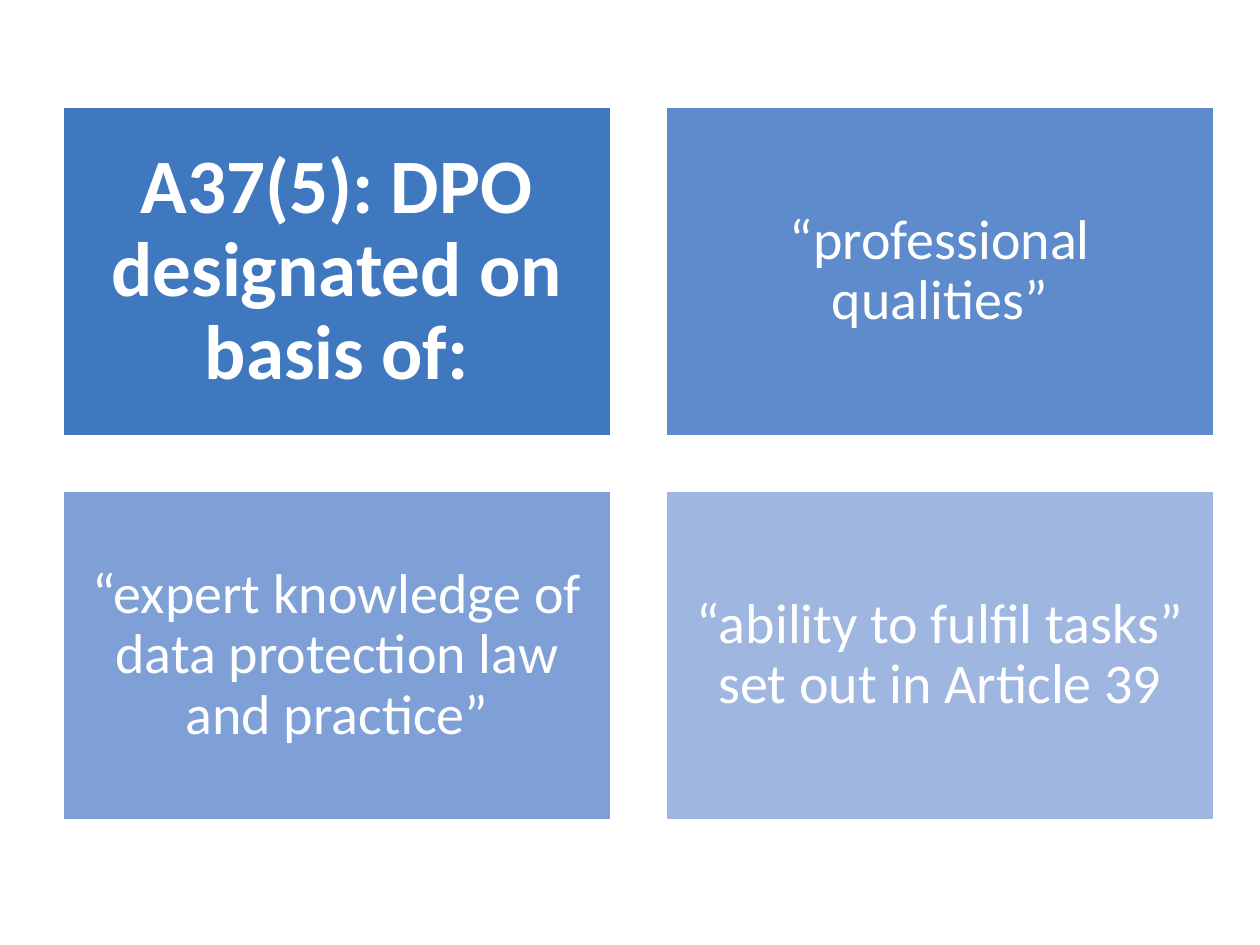
"""Build a slide with a two-by-two grid of DPO designation criteria."""
from dataclasses import dataclass

from pptx import Presentation, util as u
from pptx.dml.color import RGBColor
from pptx.enum import shapes, text
from pptx.shapes.autoshape import Shape
from pptx.slide import Slide

PIXELS_PER_INCH = 126
COLUMNS = 2
LEFT, TOP = 63, 107
WIDTH, HEIGHT, GAP = 548, 329, 55
COLORS = {
    "heading": "3F78BF",
    "qualities": "5E8BCB",
    "knowledge": "7FA0D7",
    "ability": "9FB6E1",
    "white": "FFFFFF",
}


@dataclass(frozen=True)
class Tile:
    words: str
    color: str
    size: int = 32
    bold: bool = False
    inset: int = 16


TILES = [
    Tile("A37(5): DPO designated on basis of:", "heading", size=44, bold=True, inset=22),
    Tile("“professional qualities”", "qualities"),
    Tile("“expert knowledge of data protection law and practice”", "knowledge"),
    Tile("“ability to fulfil tasks” set out in Article 39", "ability"),
]


def px(length: int) -> u.Emu:
    return u.Emu(round(length * 914400 / PIXELS_PER_INCH))


def rgb(name: str) -> RGBColor:
    return RGBColor.from_string(COLORS[name])


def write_text(shape: Shape, words: str, *, size: int, bold: bool, inset: int,
               color: str = "white", font: str = "Calibri") -> None:
    frame = shape.text_frame
    frame.word_wrap = True
    frame.vertical_anchor = text.MSO_ANCHOR.MIDDLE
    frame.margin_left = frame.margin_right = px(inset)
    frame.margin_top = frame.margin_bottom = px(inset)
    paragraph = frame.paragraphs[0]
    paragraph.alignment = text.PP_ALIGN.CENTER
    paragraph.line_spacing = 0.9
    run = paragraph.add_run()
    run.text = words
    run.font.name = font
    run.font.size = u.Pt(size)
    run.font.bold = bold
    run.font.color.rgb = rgb(color)


def draw_tile(slide: Slide, tile: Tile, index: int) -> None:
    row, column = divmod(index, COLUMNS)
    shape = slide.shapes.add_shape(
        shapes.MSO_SHAPE.RECTANGLE,
        px(LEFT + column * (WIDTH + GAP)), px(TOP + row * (HEIGHT + GAP)),
        px(WIDTH), px(HEIGHT),
    )
    shape.shadow.inherit = False
    shape.fill.solid()
    shape.fill.fore_color.rgb = rgb(tile.color)
    shape.line.color.rgb = rgb("white")
    shape.line.width = u.Pt(1.25)
    write_text(shape, tile.words, size=tile.size, bold=tile.bold, inset=tile.inset)


def main() -> None:
    presentation = Presentation()
    presentation.slide_width, presentation.slide_height = px(1260), px(945)
    slide = presentation.slides.add_slide(presentation.slide_layouts[6])
    for index, tile in enumerate(TILES):
        draw_tile(slide, tile, index)
    presentation.save("out.pptx")


if __name__ == "__main__":
    main()
